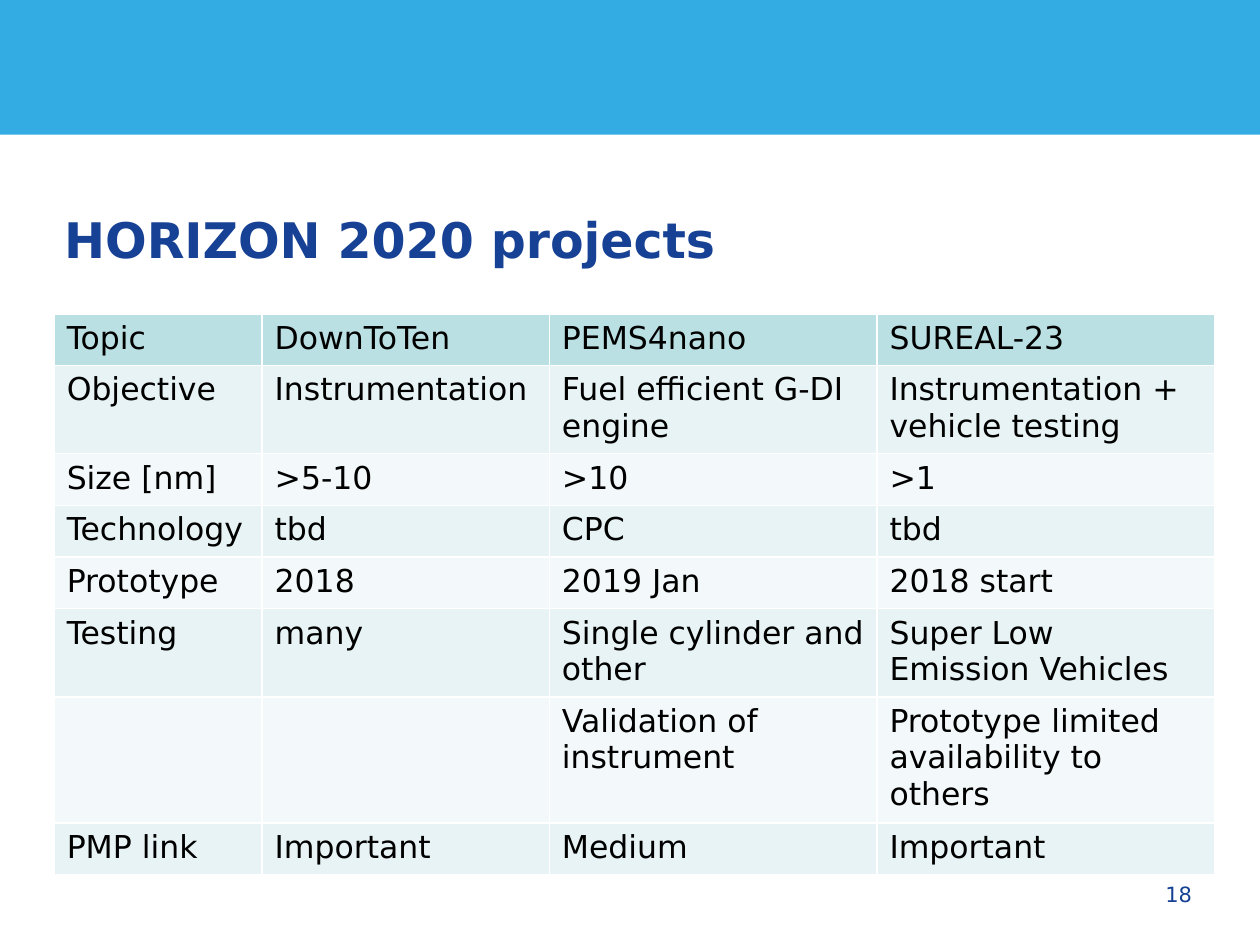
from pptx import Presentation
from pptx.dml.color import RGBColor
from pptx.enum import shapes, text
from pptx.util import Inches, Pt

TITLE = "HORIZON 2020 projects"
PAGE_NUMBER = "18"
ROWS = [
    ("Topic", "DownToTen", "PEMS4nano", "SUREAL-23"),
    ("Objective", "Instrumentation", "Fuel efficient G-DI engine", "Instrumentation + vehicle testing"),
    ("Size [nm]", ">5-10", ">10", ">1"),
    ("Technology", "tbd", "CPC", "tbd"),
    ("Prototype", "2018", "2019 Jan", "2018 start"),
    ("Testing", "many", "Single cylinder and other", "Super Low Emission Vehicles"),
    ("", "", "Validation of instrument", "Prototype limited availability to others"),
    ("PMP link", "Important", "Medium", "Important"),
]
COLUMN_WIDTHS = [1.65, 2.28, 2.6, 2.68]
ROW_HEIGHTS = [0.41, 0.7, 0.41, 0.41, 0.41, 0.7, 1, 0.41]

FONT = "DejaVu Sans"
BANNER = RGBColor(0x33, 0xAC, 0xE3)
NAVY = RGBColor(0x16, 0x41, 0x94)
BLACK = RGBColor(0, 0, 0)
HEADER = RGBColor(0xBB, 0xE0, 0xE3)
BANDS = [RGBColor(0xF3, 0xF9, 0xFA), RGBColor(0xE7, 0xF3, 0xF4)]


def write(frame, words, size, color, bold=False):
    frame.text = words
    para = frame.paragraphs[0]
    para.font.size = Pt(size)
    for span in para.runs:
        span.font.name = FONT
        span.font.size = Pt(size)
        span.font.bold = bold
        span.font.color.rgb = color
    return para


def set_margins(frame, sides):
    frame.margin_left = frame.margin_right = Inches(sides)
    frame.margin_top = frame.margin_bottom = 0


def add_banner(page):
    banner = page.shapes.add_shape(shapes.MSO_SHAPE.RECTANGLE, 0, 0, Inches(10), Inches(1.07))
    banner.shadow.inherit = False
    banner.fill.solid()
    banner.fill.fore_color.rgb = BANNER
    banner.line.fill.background()


def add_page_number(page):
    box = page.shapes.add_textbox(Inches(7.23), Inches(6.9), Inches(2.33), Inches(0.4))
    frame = box.text_frame
    frame.word_wrap = True
    frame.vertical_anchor = text.MSO_ANCHOR.MIDDLE
    set_margins(frame, 0.1)
    write(frame, PAGE_NUMBER, 12, NAVY).alignment = text.PP_ALIGN.RIGHT


def format_title(title):
    title.left, title.top = Inches(0.51), Inches(1.62)
    title.width, title.height = Inches(8.98), Inches(0.71)
    frame = title.text_frame
    frame.vertical_anchor = text.MSO_ANCHOR.TOP
    frame.auto_size = text.MSO_AUTO_SIZE.NONE
    set_margins(frame, 0)
    para = write(frame, TITLE, 28, NAVY, bold=True)
    para.alignment = text.PP_ALIGN.LEFT
    para.line_spacing = 1.1


def add_projects(page):
    table = page.shapes.add_table(
        len(ROWS), len(COLUMN_WIDTHS), Inches(0.43), Inches(2.49),
        Inches(sum(COLUMN_WIDTHS)), Inches(sum(ROW_HEIGHTS)),
    ).table
    for column, width in zip(table.columns, COLUMN_WIDTHS):
        column.width = Inches(width)
    for index, (row, height, values) in enumerate(zip(table.rows, ROW_HEIGHTS, ROWS)):
        row.height = Inches(height)
        for cell, value in zip(row.cells, values):
            cell.fill.solid()
            cell.fill.fore_color.rgb = BANDS[index % 2] if index else HEADER
            write(cell.text_frame, value, 18, BLACK)


def main():
    deck = Presentation()
    deck.slide_width, deck.slide_height = Inches(10), Inches(7.5)
    page = deck.slides.add_slide(deck.slide_layouts[5])
    add_banner(page)
    add_page_number(page)
    format_title(page.shapes.title)
    add_projects(page)
    deck.save("out.pptx")


if __name__ == "__main__":
    main()
